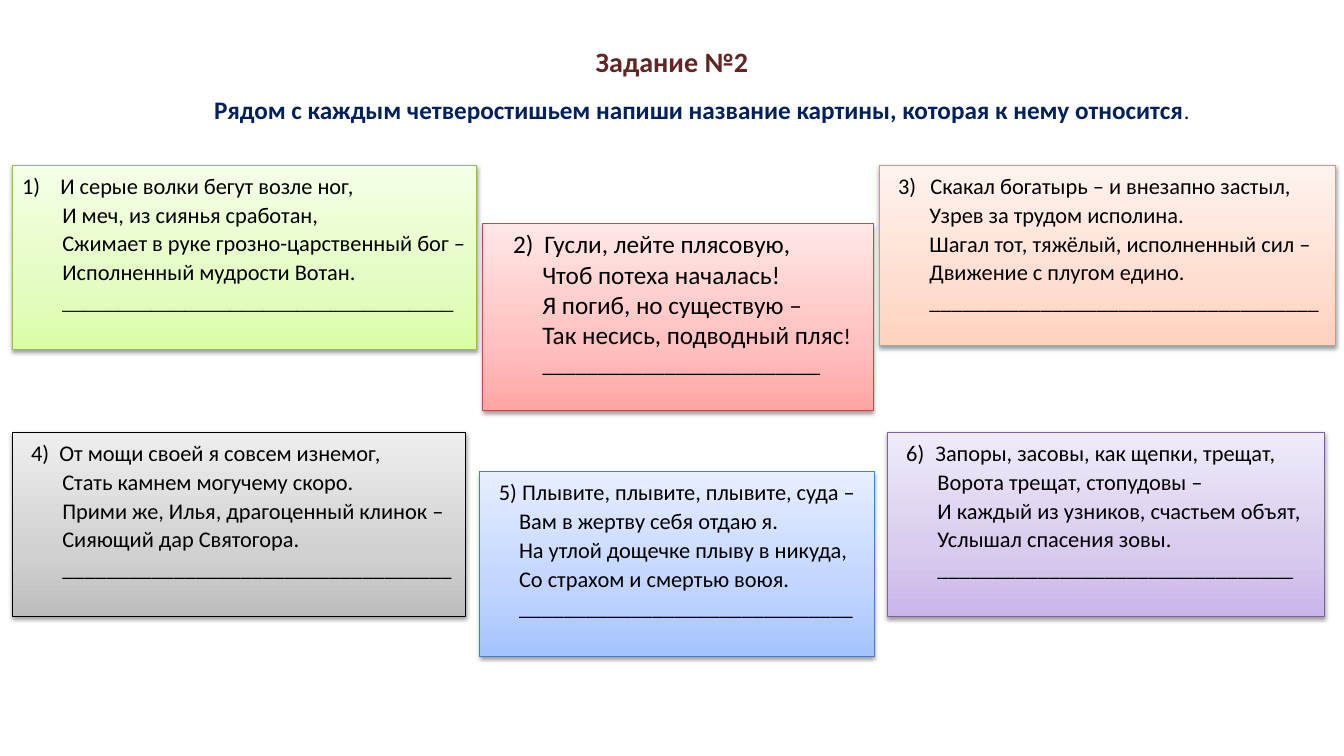
from lxml.etree import SubElement
from pptx import Presentation
from pptx.dml.color import RGBColor
from pptx.enum.shapes import MSO_SHAPE
from pptx.enum.text import MSO_ANCHOR, MSO_AUTO_SIZE, PP_ALIGN
from pptx.oxml.ns import qn
from pptx.util import Inches, Pt

CARDS = [
    dict(box=(0.12, 1.64, 4.61, 1.83), tones=("DAFDA7", "E4FCC2", "F5FFE7"),
         edge="98B955", mark=0, first=0.38, rule_font="Times New Roman",
         lines=["1)\tИ серые волки бегут возле ног,",
                "И меч, из сиянья сработан,",
                "Сжимает в руке грозно-царственный бог –",
                "Исполненный мудрости Вотан."], rule=35),
    dict(box=(4.76, 4.68, 3.91, 1.83), tones=("A4C4FF", "BFD4FF", "E6EEFF"),
         edge="4B7EBC", first=0.32, rest=0.29,
         lines=["5)\tПлывите, плывите, плывите, суда –",
                "Вам в жертву себя отдаю я.",
                "На утлой дощечке плыву в никуда,",
                "Со страхом и смертью воюя."], rule=30),
    dict(box=(8.72, 1.64, 4.53, 1.79), tones=("FFD2BD", "FFDED0", "FFF2ED"),
         edge="F69240", first=0.41,
         lines=["3)\tСкакал богатырь – и внезапно застыл,",
                "Узрев за трудом исполина.",
                "Шагал тот, тяжёлый, исполненный сил –",
                "Движение с плугом едино."], rule=35),
    dict(box=(4.79, 2.22, 3.87, 1.85), tones=("FFA6A5", "FFC0BF", "FFE7E7"),
         edge="BF4C48", mark=0.2, first=0.51, rest=0.49, size=18, space=1.0,
         rule_size=16, end="!",
         lines=["2)\tГусли, лейте плясовую,",
                "Чтоб потеха началась!",
                "Я погиб, но существую –",
                "Так несись, подводный пляс"], rule=25),
    dict(box=(0.12, 4.29, 4.5, 1.83), tones=("BDBDBD", "D1D1D1", "EEEEEE"),
         edge="000000", first=0.37,
         lines=["4)\tОт мощи своей я совсем изнемог,",
                "Стать камнем могучему скоро.",
                "Прими же, Илья, драгоценный клинок –",
                "Сияющий дар Святогора."], rule=35),
    dict(box=(8.8, 4.29, 4.34, 1.83), tones=("C9B5E8", "D8CBEE", "F0EAF9"),
         edge="7D60A0", first=0.38,
         lines=["6)\tЗапоры, засовы, как щепки, трещат,",
                "Ворота трещат, стопудовы –",
                "И каждый из узников, счастьем объят,",
                "Услышал спасения зовы."], rule=32),
]


def tint(color, code):
    color.rgb = RGBColor.from_string(code)


def write(par, text, size=16, font="Calibri", color="000000", bold=False):
    run = par.add_run()
    run.text = text
    run.font.size = Pt(size)
    run.font.name = font
    run.font.bold = bold
    tint(run.font.color, color)


def indent(par, left, hang=0):
    props = par._p.get_or_add_pPr()
    props.set("marL", str(Inches(left)))
    props.set("indent", str(Inches(hang)))


def set_frame(frame, anchor=MSO_ANCHOR.TOP):
    frame.word_wrap = True
    frame.auto_size = MSO_AUTO_SIZE.NONE
    frame.vertical_anchor = anchor


def shade(shape, tones):
    shape.fill.gradient()
    shape.fill.gradient_angle = 90
    stops = shape._element.spPr.find(qn("a:gradFill")).find(qn("a:gsLst"))
    for stop in list(stops):
        stops.remove(stop)
    for place, tone in zip((0, 35, 100), tones):
        stop = SubElement(stops, qn("a:gs"), pos=str(place * 1000))
        SubElement(stop, qn("a:srgbClr"), val=tone)


def cast(shape):
    shape.shadow.inherit = False
    effects = shape._element.spPr.find(qn("a:effectLst"))
    drop = SubElement(effects, qn("a:outerShdw"), blurRad=str(Pt(3.1)),
                      dist=str(Pt(1.6)), dir="5400000", rotWithShape="0")
    black = SubElement(drop, qn("a:srgbClr"), val="000000")
    SubElement(black, qn("a:alpha"), val="38000")


def add_card(slide, box, tones, edge, lines, rule, first, mark=0.09, rest=0.4,
             size=16, space=1.07, rule_size=None, rule_font="Calibri", end=""):
    shape = slide.shapes.add_shape(MSO_SHAPE.RECTANGLE, *map(Inches, box))
    shade(shape, tones)
    tint(shape.line.color, edge)
    shape.line.width = Pt(0.75)
    cast(shape)
    frame = shape.text_frame
    set_frame(frame)
    for row, text in enumerate(lines + ["_" * rule]):
        par = frame.add_paragraph() if row else frame.paragraphs[0]
        par.alignment = PP_ALIGN.LEFT
        par.line_spacing = space
        if row:
            indent(par, rest)
        else:
            indent(par, first, mark - first)
        if row == len(lines):
            write(par, text, size=rule_size or size, font=rule_font)
        else:
            write(par, text, size=size)
        if end and row == len(lines) - 1:
            write(par, end)


def add_title(slide):
    title = slide.shapes.title
    title.left, title.top, title.width, title.height = map(
        Inches, (0, 0.4, 13.33, 0.42))
    set_frame(title.text_frame, MSO_ANCHOR.MIDDLE)
    par = title.text_frame.paragraphs[0]
    par.alignment = PP_ALIGN.CENTER
    write(par, "Задание №2", size=20, color="632523", bold=True)


def add_task(slide):
    box = slide.shapes.add_textbox(*map(Inches, (0.64, 0.87, 12.14, 0.41)))
    set_frame(box.text_frame)
    par = box.text_frame.paragraphs[0]
    par.alignment = PP_ALIGN.CENTER
    par.line_spacing = 1.07
    indent(par, 0.5)
    write(par, "Рядом с каждым четверостишьем напиши название картины, "
          "которая к нему относится", size=18, color="002060", bold=True)
    write(par, ".", color="002060")


def main():
    deck = Presentation()
    deck.slide_width, deck.slide_height = Inches(13.33), Inches(7.5)
    slide = deck.slides.add_slide(deck.slide_layouts[5])
    add_title(slide)
    add_task(slide)
    for card in CARDS:
        add_card(slide, **card)
    deck.save("out.pptx")


if __name__ == "__main__":
    main()
